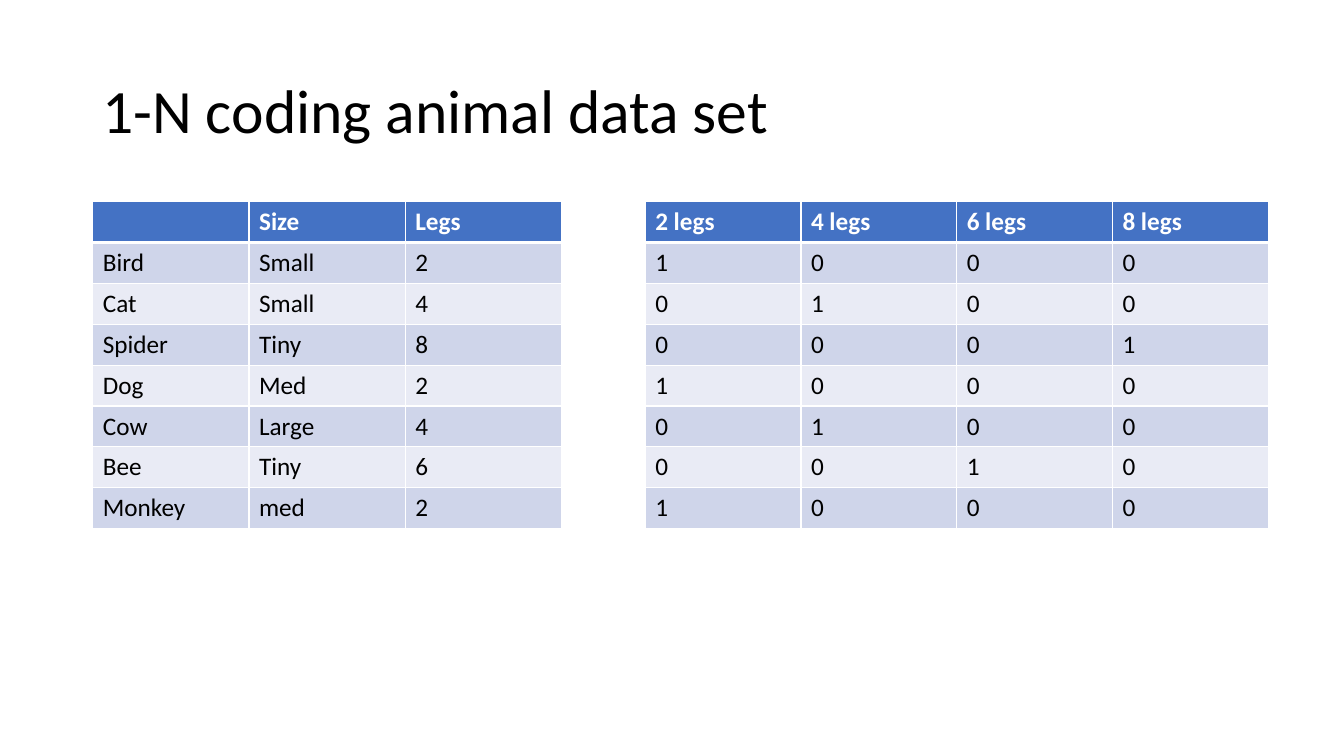
from lxml.etree import SubElement
from pptx import Presentation
from pptx.dml.color import RGBColor
from pptx.enum.text import MSO_ANCHOR
from pptx.oxml.ns import qn
from pptx.util import Cm, Pt

ANIMALS = [
    ("Bird", "Small", 2),
    ("Cat", "Small", 4),
    ("Spider", "Tiny", 8),
    ("Dog", "Med", 2),
    ("Cow", "Large", 4),
    ("Bee", "Tiny", 6),
    ("Monkey", "med", 2),
]
LEG_COUNTS = (2, 4, 6, 8)
HEADER_FILL = "4472C4"
BAND_FILLS = ("CFD5EA", "E9EBF5")
ROW_HEIGHT = 1.03


def rgb(value):
    """Return the colour for a hex string."""
    return RGBColor.from_string(value)


def style_font(font, size, color, bold=False):
    """Set the typeface, size, colour and weight of a font."""
    font.name = "Calibri"
    font.size = Pt(size)
    font.bold = bold
    font.color.rgb = rgb(color)


def add_borders(cell, row):
    """Draw white cell borders, with a heavy line under the header row."""
    heavy_side = {0: "lnB", 1: "lnT"}.get(row)
    for side in ("lnL", "lnR", "lnT", "lnB"):
        width = Pt(3 if side == heavy_side else 1)
        ln = SubElement(cell._tc.get_or_add_tcPr(), qn(f"a:{side}"), w=str(width))
        fill = SubElement(ln, qn("a:solidFill"))
        SubElement(fill, qn("a:srgbClr"), val="FFFFFF")


def add_title(slide, text, left, top, width, height):
    """Place the slide title, centred vertically in its box."""
    tf = slide.shapes.add_textbox(Cm(left), Cm(top), Cm(width), Cm(height)).text_frame
    tf.word_wrap = True
    tf.vertical_anchor = MSO_ANCHOR.MIDDLE
    p = tf.paragraphs[0]
    p.text = text
    p.line_spacing = 0.9
    style_font(p.font, 44, "000000")


def add_data_table(slide, rows, left, top, width):
    """Place a banded table with equal columns and a header row."""
    n_rows, n_cols = len(rows), len(rows[0])
    table = slide.shapes.add_table(
        n_rows, n_cols, Cm(left), Cm(top), Cm(width), Cm(ROW_HEIGHT * n_rows)
    ).table
    for i, values in enumerate(rows):
        header = i == 0
        for j, value in enumerate(values):
            cell = table.cell(i, j)
            add_borders(cell, i)
            cell.fill.solid()
            cell.fill.fore_color.rgb = rgb(HEADER_FILL if header else BAND_FILLS[(i - 1) % 2])
            p = cell.text_frame.paragraphs[0]
            p.text = str(value)
            style_font(p.font, 18, "FFFFFF" if header else "000000", header)


def main():
    """Build the slide and save it."""
    prs = Presentation()
    prs.slide_width, prs.slide_height = Cm(33.87), Cm(19.05)
    slide = prs.slides.add_slide(prs.slide_layouts[6])
    add_title(slide, "1-N coding animal data set", 2.33, 1.02, 29.21, 3.68)
    add_data_table(slide, [("", "Size", "Legs"), *ANIMALS], 2.34, 5.08, 11.81)
    coding = [[int(legs == count) for count in LEG_COUNTS] for _, _, legs in ANIMALS]
    header = [f"{count} legs" for count in LEG_COUNTS]
    add_data_table(slide, [header, *coding], 16.26, 5.08, 15.7)
    prs.save("out.pptx")


if __name__ == "__main__":
    main()
